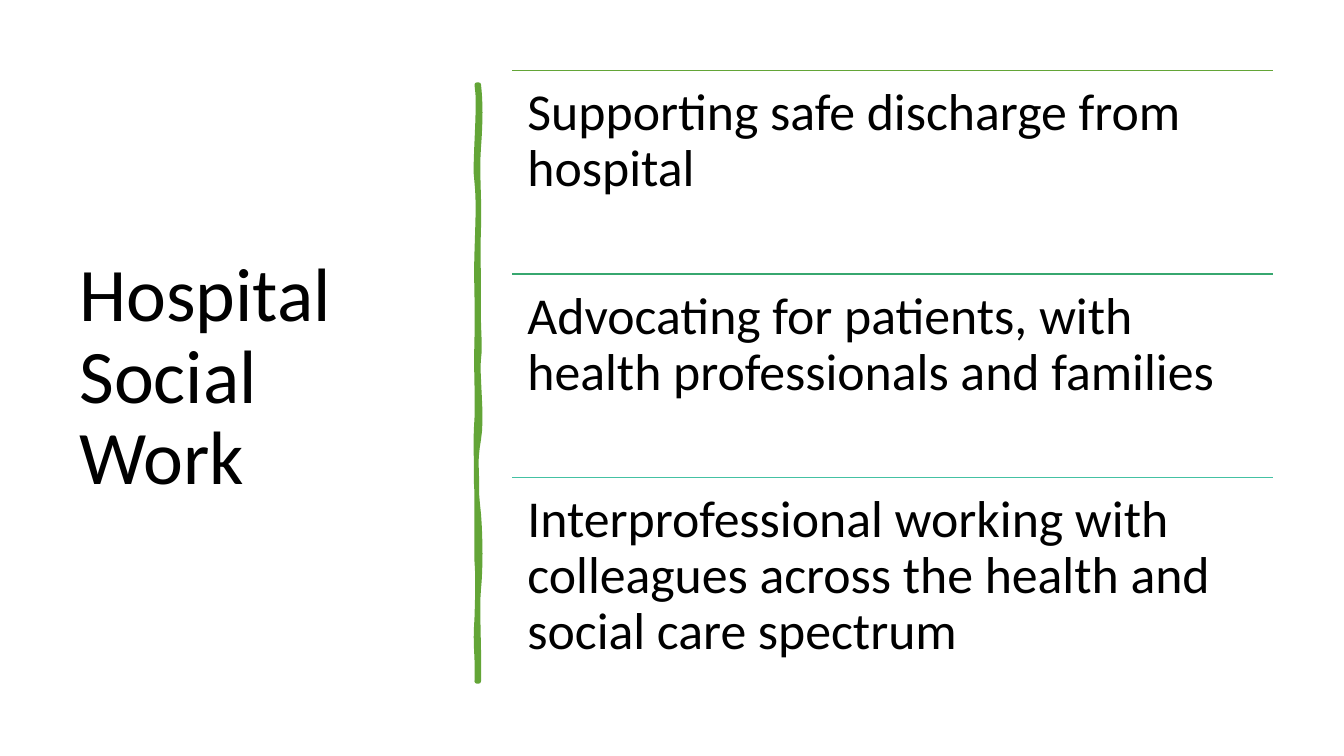
from typing import NamedTuple

from lxml import etree
from pptx import Presentation
from pptx import util as u
from pptx.dml.color import RGBColor
from pptx.enum import shapes, text
from pptx.oxml import ns

BLACK = RGBColor(0x00, 0x00, 0x00)
GREEN = RGBColor(0x63, 0xA5, 0x37)
JADE = RGBColor(0x37, 0xA7, 0x6F)
TEAL = RGBColor(0x44, 0xC1, 0xA3)

LEFT, TOP, WIDTH, PITCH = 365.76, 50.4, 543.6, 145.4
STEPS = 8  # line segments per curve of the brush stroke
UNITS = 100  # freeform units per point


class Duty(NamedTuple):
    words: str
    color: RGBColor


class Point(NamedTuple):
    x: float
    y: float


DUTIES = [
    Duty("Supporting safe discharge from hospital", GREEN),
    Duty("Advocating for patients, with health professionals and families", JADE),
    Duty("Interprofessional working with colleagues across the health "
         "and social care spectrum", TEAL),
]

# Each edge is a chain of cubic curves: a start, then two handles and an end.
RIGHT_EDGE = [Point(*p) for p in (
    (342, 60.5),
    (343.4, 73.4), (343.4, 85.7), (342, 105.1),
    (340.6, 124.6), (342.7, 140.4), (342, 162.7),
    (341.3, 185), (342, 188.6), (342, 211.7),
    (341.3, 234), (343.4, 246.2), (342, 256.3),
    (340.6, 266.4), (344.9, 298.1), (342, 313.9),
    (339.1, 329), (339.8, 348.5), (342, 367.2),
    (343.4, 385.9), (343.4, 406.1), (342, 420.5),
    (340.6, 434.2), (342.7, 468), (342, 486.7),
)]
LEFT_EDGE = [Point(*p) for p in (
    (340.6, 486.7),
    (341.3, 465.1), (339.1, 463.7), (340.6, 441.4),
    (341.3, 419.8), (341.3, 410.4), (340.6, 401),
    (340.6, 391.7), (340.6, 356.4), (340.6, 343.4),
    (340.6, 330.5), (339.1, 320.4), (340.6, 298.8),
    (341.3, 277.9), (339.8, 268.6), (340.6, 241.2),
    (341.3, 214.6), (339.8, 202.3), (340.6, 180),
    (341.3, 157), (342, 144), (340.6, 130.3),
    (338.4, 117.4), (343.4, 74.9), (340.6, 60.5),
)]


def trace(edge: list[Point]) -> list[Point]:
    """Turn a chain of cubic curves into points in freeform units."""
    dots = [Point(edge[0].x * UNITS, edge[0].y * UNITS)]
    for i in range(0, len(edge) - 1, 3):
        curve = edge[i:i + 4]
        for step in range(1, STEPS + 1):
            t = step / STEPS
            parts = ((1 - t) ** 3, 3 * t * (1 - t) ** 2, 3 * t * t * (1 - t), t ** 3)
            dots.append(Point(
                UNITS * sum(k * p.x for k, p in zip(parts, curve)),
                UNITS * sum(k * p.y for k, p in zip(parts, curve))))
    return dots


def add_brush(slide) -> None:
    start, *rest = trace(RIGHT_EDGE) + trace(LEFT_EDGE)
    pen = slide.shapes.build_freeform(start.x, start.y, scale=u.Pt(1) / UNITS)
    pen.add_line_segments(rest, close=True)
    brush = pen.convert_to_shape()
    brush.shadow.inherit = False
    brush.fill.solid()
    brush.fill.fore_color.rgb = GREEN
    brush.line.color.rgb = GREEN
    brush.line.width = u.Pt(3.25)


def add_text(slide, words: str, *, left: float, top: float, width: float,
             height: float, size: float, side: float, edge: float,
             anchor: text.MSO_ANCHOR) -> None:
    """Add a text box; side and edge are its insets across and down."""
    box = slide.shapes.add_textbox(u.Pt(left), u.Pt(top), u.Pt(width), u.Pt(height))
    frame = box.text_frame
    frame.word_wrap = True
    frame.vertical_anchor = anchor
    frame.margin_left = frame.margin_right = u.Pt(side)
    frame.margin_top = frame.margin_bottom = u.Pt(edge)
    para = frame.paragraphs[0]
    para.line_spacing = 0.9
    run = para.add_run()
    run.text = words
    run.font.name = "Calibri"
    run.font.size = u.Pt(size)
    run.font.color.rgb = BLACK


def add_rule(slide, top: float, color: RGBColor) -> None:
    rule = slide.shapes.add_connector(
        shapes.MSO_CONNECTOR.STRAIGHT,
        u.Pt(LEFT), u.Pt(top), u.Pt(LEFT + WIDTH), u.Pt(top))
    rule.line.color.rgb = color
    rule.line.width = u.Pt(1)
    etree.SubElement(rule._element.spPr, ns.qn("a:effectLst"))


def main() -> None:
    deck = Presentation()
    deck.slide_width, deck.slide_height = u.Pt(960), u.Pt(540)
    slide = deck.slides.add_slide(deck.slide_layouts[6])
    add_text(slide, "Hospital Social Work", left=49.7, top=50.4, width=269.3,
             height=440, size=54, side=7.2, edge=3.6,
             anchor=text.MSO_ANCHOR.MIDDLE)
    add_brush(slide)
    for row, duty in enumerate(DUTIES):
        top = TOP + row * PITCH
        add_rule(slide, top, duty.color)
        add_text(slide, duty.words, left=LEFT, top=top, width=WIDTH,
                 height=PITCH, size=37, side=11, edge=11,
                 anchor=text.MSO_ANCHOR.TOP)
    deck.save("out.pptx")


if __name__ == "__main__":
    main()
